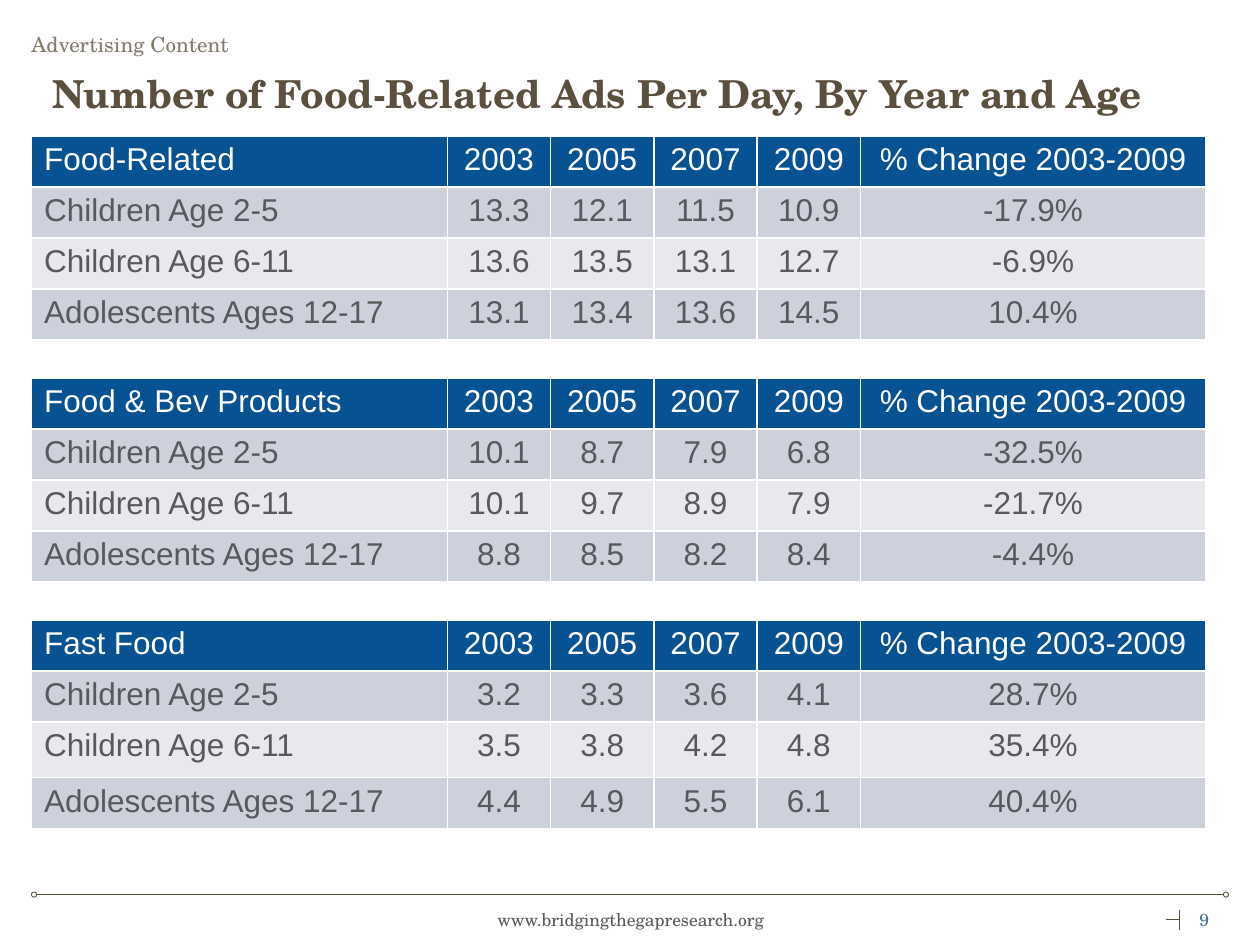
from lxml.etree import SubElement
from pptx import Presentation
from pptx.dml.color import RGBColor
from pptx.enum.shapes import MSO_CONNECTOR, MSO_SHAPE
from pptx.enum.text import MSO_ANCHOR as ANCHOR, PP_ALIGN as ALIGN
from pptx.oxml.ns import qn
from pptx.util import Inches, Pt

SERIF = "TeX Gyre Schola"
BROWN, GRAY, WHITE, NAVY = "5B4F3E", "58595C", "FFFFFF", "065293"
BANDS = ["CCD1DC", "E7E9EE"]


def rgb(value):
    return RGBColor.from_string(value)


def write(frame, text, size, color, font=SERIF, bold=False, align=ALIGN.LEFT):
    paragraph = frame.paragraphs[0]
    paragraph.alignment = align
    run = paragraph.add_run()
    run.text = text
    for name, value in {"name": font, "size": Pt(size), "bold": bold}.items():
        setattr(run.font, name, value)
    run.font.color.rgb = rgb(color)
    return run


presentation = Presentation()
presentation.slide_width = Inches(10)
presentation.slide_height = Inches(7.5)
slide = presentation.slides.add_slide(presentation.slide_layouts[5])
shapes = slide.shapes

for x1, y1, x2, y2 in [
    (0.29, 7.1, 9.71, 7.1),
    (9.36, 7.22, 9.36, 7.38),
    (9.25, 7.3, 9.36, 7.3),
]:
    line = shapes.add_connector(
        MSO_CONNECTOR.STRAIGHT, Inches(x1), Inches(y1), Inches(x2), Inches(y2)
    )
    line.line.color.rgb = rgb(BROWN)
    line.line.width = Pt(0.5)
    SubElement(line._element.spPr, qn("a:effectLst"))

for left in (0.25, 9.71):
    ring = shapes.add_shape(
        MSO_SHAPE.OVAL, Inches(left), Inches(7.08), Inches(0.04), Inches(0.04)
    )
    ring.shadow.inherit = False
    ring.fill.background()
    ring.line.color.rgb = rgb(BROWN)
    ring.line.width = Pt(0.5)

for text, left, width, color, align in [
    ("www.bridgingthegapresearch.org", 3.42, 3.17, GRAY, ALIGN.CENTER),
    ("9", 9.42, 0.5, "3F6F9E", ALIGN.LEFT),
]:
    footer = shapes.add_textbox(Inches(left), Inches(7.1), Inches(width), Inches(0.4))
    footer.text_frame.word_wrap = True
    footer.text_frame.vertical_anchor = ANCHOR.MIDDLE
    write(footer.text_frame, text, 10, color, align=align)

title = shapes.title
title.left, title.top = Inches(0.42), Inches(0.42)
title.width, title.height = Inches(8.92), Inches(0.5)
caption = shapes.add_textbox(Inches(0.25), Inches(0.25), Inches(8.17), Inches(0.2))
for shape, anchor in [(title, ANCHOR.BOTTOM), (caption, ANCHOR.TOP)]:
    frame_format = {
        "margin_left": 0,
        "margin_top": 0,
        "margin_right": 0,
        "margin_bottom": 0,
        "word_wrap": True,
        "vertical_anchor": anchor,
    }
    for name, value in frame_format.items():
        setattr(shape.text_frame, name, value)
write(
    title.text_frame,
    "Number of Food-Related Ads Per Day, By Year and Age",
    22,
    BROWN,
    bold=True,
)
caption_run = write(caption.text_frame, "Advertising Content", 12, BROWN)
caption_color = caption_run._r.find(".//" + qn("a:srgbClr"))
SubElement(caption_color, qn("a:alpha"), val="75000")

years = ["2003", "2005", "2007", "2009", "% Change 2003-2009"]
ages = ["Children Age 2-5", "Children Age 6-11", "Adolescents Ages 12-17"]
column_widths = [3.3] + [0.82] * 4 + [2.74]
row_height = 0.405
tables = [
    ("Food-Related", 1.08, [
        ["13.3", "12.1", "11.5", "10.9", "-17.9%"],
        ["13.6", "13.5", "13.1", "12.7", "-6.9%"],
        ["13.1", "13.4", "13.6", "14.5", "10.4%"],
    ]),
    ("Food & Bev Products", 3, [
        ["10.1", "8.7", "7.9", "6.8", "-32.5%"],
        ["10.1", "9.7", "8.9", "7.9", "-21.7%"],
        ["8.8", "8.5", "8.2", "8.4", "-4.4%"],
    ]),
    ("Fast Food", 4.92, [
        ["3.2", "3.3", "3.6", "4.1", "28.7%"],
        ["3.5", "3.8", "4.2", "4.8", "35.4%"],
        ["4.4", "4.9", "5.5", "6.1", "40.4%"],
    ]),
]

for heading, top, values in tables:
    rows = [[heading] + years] + [[age] + row for age, row in zip(ages, values)]
    table = shapes.add_table(
        len(rows), len(column_widths), Inches(0.25), Inches(top),
        Inches(sum(column_widths)), Inches(row_height * len(rows)),
    ).table
    for column, width in zip(table.columns, column_widths):
        column.width = Inches(width)
    for row_index, row in enumerate(rows):
        table.rows[row_index].height = Inches(row_height)
        fill = BANDS[(row_index - 1) % 2] if row_index else NAVY
        for column_index, text in enumerate(row):
            cell = table.cell(row_index, column_index)
            cell.fill.solid()
            cell.fill.fore_color.rgb = rgb(fill)
            write(
                cell.text_frame, text, 18, GRAY if row_index else WHITE, "Arial",
                align=ALIGN.CENTER if column_index else ALIGN.LEFT,
            )
    if heading == "Fast Food":
        table.rows[2].height = Inches(0.44)

presentation.save("out.pptx")
